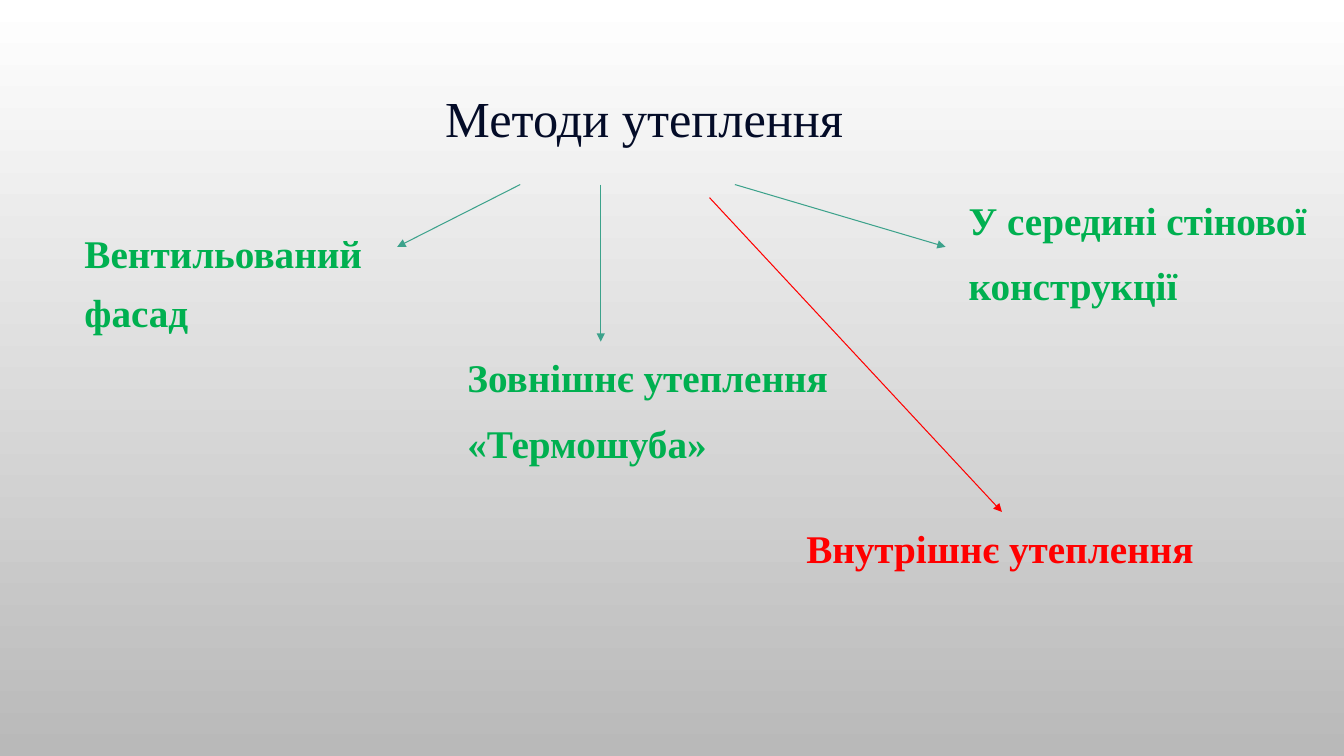
from dataclasses import dataclass
from typing import Optional

from lxml.etree import SubElement
from pptx import Presentation
from pptx.dml.color import RGBColor
from pptx.enum.shapes import MSO_CONNECTOR
from pptx.enum.text import MSO_AUTO_SIZE, PP_ALIGN
from pptx.oxml.ns import qn
from pptx.shapes.autoshape import Shape
from pptx.slide import Slide
from pptx.util import Cm, Pt

FONT = "Times New Roman"
COLORS = {
    "title": "040C28",
    "good": "00B050",
    "bad": "FF0000",
    "arrow": "3CA28B",
    "bg_top": "FFFFFF",
    "bg_bottom": "B9B9B9",
}
TOP_SITE = 0


def rgb(name: str) -> RGBColor:
    return RGBColor.from_string(COLORS[name])


@dataclass
class Label:
    left: float
    top: float
    width: float
    height: float
    lines: tuple[str, ...]
    color: str = "good"
    size: int = 28
    bold: bool = True
    wrap: bool = False
    align: Optional[PP_ALIGN] = PP_ALIGN.JUSTIFY
    spacing: Optional[float] = 1.15
    after: int = 8


@dataclass
class Arrow:
    x1: float
    y1: float
    x2: float
    y2: float
    color: str = "arrow"
    target: Optional[Shape] = None


def paint_background(s: Slide) -> None:
    fill = s.background.fill
    fill.gradient()
    fill.gradient_angle = 270
    for stop, name in zip(fill.gradient_stops, ("bg_top", "bg_bottom")):
        stop.color.rgb = rgb(name)


def add_label(s: Slide, label: Label) -> Shape:
    sp = s.shapes.add_textbox(
        Cm(label.left), Cm(label.top), Cm(label.width), Cm(label.height))
    tf = sp.text_frame
    tf.word_wrap = label.wrap
    tf.auto_size = MSO_AUTO_SIZE.SHAPE_TO_FIT_TEXT
    tf.text = "\n".join(label.lines)
    for p in tf.paragraphs:
        p.alignment = label.align
        p.line_spacing = label.spacing
        p.space_after = Pt(label.after)
        p.font.name = FONT
        p.font.size = Pt(label.size)
        p.font.bold = label.bold
        p.font.color.rgb = rgb(label.color)
    return sp


def add_arrow(s: Slide, arrow: Arrow) -> None:
    """Draw a thin arrow, joined to the top of its target if it has one."""
    cxn = s.shapes.add_connector(
        MSO_CONNECTOR.STRAIGHT,
        Cm(arrow.x1), Cm(arrow.y1), Cm(arrow.x2), Cm(arrow.y2))
    cxn.line.color.rgb = rgb(arrow.color)
    cxn.line.width = Pt(0.75)
    SubElement(cxn.line._get_or_add_ln(), qn("a:tailEnd"), type="triangle")
    SubElement(cxn._element.spPr, qn("a:effectLst"))
    if arrow.target is not None:
        cxn.end_connect(arrow.target, TOP_SITE)


def main() -> None:
    prs = Presentation()
    prs.slide_width, prs.slide_height = Cm(33.87), Cm(19.05)
    s = prs.slides.add_slide(prs.slide_layouts[6])
    paint_background(s)

    title = Label(10.97, 2.08, 11.91, 1.8, ("Методи утеплення",), "title", 36,
                  bold=False, wrap=True, align=None, spacing=None, after=0)
    ventilated = Label(1.88, 5.66, 7.82, 2.95, ("Вентильований ", "фасад"),
                       spacing=None)
    external = Label(11.53, 8.61, 9.7, 3.18,
                     ("Зовнішнє утеплення", "«Термошуба»"))
    in_wall = Label(24.16, 4.65, 9.35, 3.18,
                    ("У середині стінової ", "конструкції"))
    for label in (title, ventilated, external, in_wall):
        add_label(s, label)
    internal = add_label(
        s, Label(20.07, 12.9, 10.36, 1.52, ("Внутрішнє утеплення",), "bad"))

    for arrow in (
        Arrow(13.11, 4.65, 10.01, 6.22),
        Arrow(15.14, 4.65, 15.14, 8.61),
        Arrow(18.52, 4.65, 23.83, 6.22),
        Arrow(17.88, 4.98, 25.25, 12.9, "bad", internal),
    ):
        add_arrow(s, arrow)

    prs.save("out.pptx")


if __name__ == "__main__":
    main()
